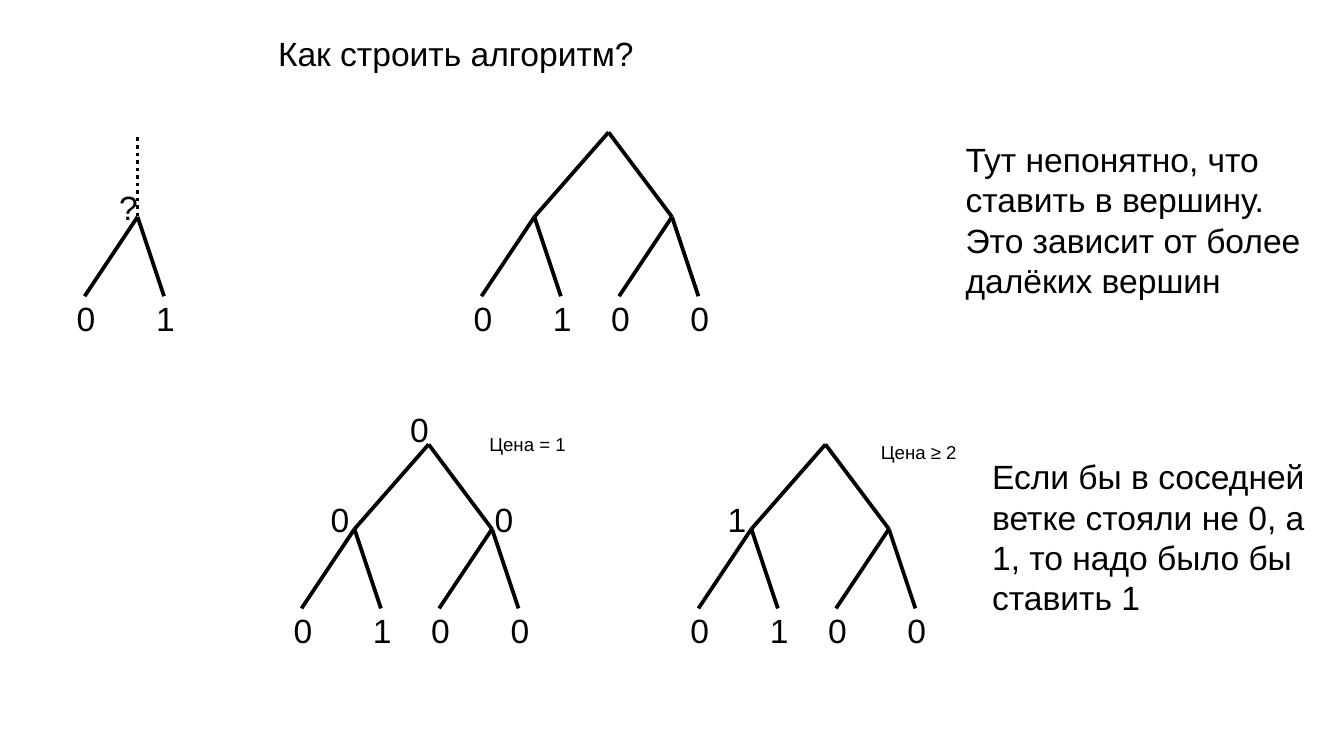
import pptx
import pptx.util
import pptx.dml.color
import pptx.enum.dml
import pptx.enum.shapes
import pptx.enum.text
from dataclasses import dataclass
from pptx.util import Cm


@dataclass(frozen=True)
class Theme:
    font: str = "Arial"
    ink: pptx.dml.color.RGBColor = pptx.dml.color.RGBColor(0, 0, 0)
    body: int = 18
    small: int = 10
    line: int = 0


THEME = Theme()

# Content (positions in cm: left, top, width, height)
TITLE = ("Как строить алгоритм?", (5, 0.5, 13.5, 0.97))
NOTES = [
    ("Тут непонятно, что ставить в вершину. Это зависит от более далёких вершин",
     (18, 2.5, 6.9, 3.1), THEME.body),
    ("Если бы в соседней ветке стояли не 0, а 1, то надо было бы ставить 1",
     (18.5, 8.5, 7, 3.1), THEME.body),
    ("Цена = 1", (9, 8.05, 3, 0.64), THEME.small),
    ("Цена ≥ 2", (16.4, 8.2, 3, 0.64), THEME.small),
]
LONE_FORK = {"at": (2.6, 4.1), "leaves": "01", "mark": "?"}
LEAVES = ("01", "00")
TREES = [
    {"root": (11.5, 2.5), "marks": ("", "", "")},
    {"root": (8.1, 8.4), "marks": ("0", "0", "0")},
    {"root": (15.6, 8.4), "marks": ("", "1", "")},
]

# Tree geometry: offsets from a node to its children and its labels
BRANCHES = [(-1.4, 1.6), (1.2, 1.6)]
TWIGS = [(-1, 1.5), (0.5, 1.5)]
STEM = (0, -1.5)
LEAF_LABEL = (-0.4, -0.1)
ROOT_LABEL = (-0.6, -0.8)
LONE_LABEL = (-0.6, -0.7)
FORK_LABELS = [(-0.7, -0.7), (-0.2, -0.7)]
LABEL_SIZE = (1, 0.97)


def shift(point, offset):
    return point[0] + offset[0], point[1] + offset[1]


def write(box, text, *, place, size=THEME.body):
    box.left, box.top, box.width, box.height = map(Cm, place)
    frame = box.text_frame
    frame.word_wrap = True
    frame.auto_size = pptx.enum.text.MSO_AUTO_SIZE.NONE
    frame.vertical_anchor = pptx.enum.text.MSO_ANCHOR.TOP
    para = frame.paragraphs[0]
    para.alignment = pptx.enum.text.PP_ALIGN.LEFT
    span = para.add_run()
    span.text = text
    span.font.name = THEME.font
    span.font.size = pptx.util.Pt(size)
    span.font.color.rgb = THEME.ink


def add_text(page, text, **style):
    write(page.shapes.add_textbox(0, 0, 0, 0), text, **style)


def add_label(page, text, node, offset):
    if text:
        add_text(page, text, place=shift(node, offset) + LABEL_SIZE)


def add_edge(page, start, end, dotted=False):
    edge = page.shapes.add_connector(
        pptx.enum.shapes.MSO_CONNECTOR.STRAIGHT, *map(Cm, start + end))
    edge.line.color.rgb = THEME.ink
    edge.line.width = pptx.util.Pt(THEME.line)
    if dotted:
        edge.line.dash_style = pptx.enum.dml.MSO_LINE.ROUND_DOT
    properties = edge._element.spPr
    properties.append(properties.makeelement(pptx.oxml.ns.qn("a:effectLst"), {}))


def add_fork(page, node, leaves, mark, mark_offset):
    for leaf, twig in zip(leaves, TWIGS):
        end = shift(node, twig)
        add_edge(page, node, end)
        add_label(page, leaf, end, LEAF_LABEL)
    add_label(page, mark, node, mark_offset)


def add_tree(page, root, marks):
    root_mark, *fork_marks = marks
    for branch, leaves, mark, offset in zip(BRANCHES, LEAVES, fork_marks, FORK_LABELS):
        node = shift(root, branch)
        add_edge(page, root, node)
        add_fork(page, node, leaves, mark, offset)
    add_label(page, root_mark, root, ROOT_LABEL)


def main():
    deck = pptx.Presentation()
    deck.slide_width, deck.slide_height = Cm(25.4), Cm(14.29)
    page = deck.slides.add_slide(deck.slide_layouts[5])

    # Title
    write(page.shapes.title, TITLE[0], place=TITLE[1])

    # Single fork with a dotted stem
    node = LONE_FORK["at"]
    add_edge(page, shift(node, STEM), node, dotted=True)
    add_fork(page, node, LONE_FORK["leaves"], LONE_FORK["mark"], LONE_LABEL)

    # Full trees
    for tree in TREES:
        add_tree(page, **tree)

    # Explanations and prices
    for text, place, size in NOTES:
        add_text(page, text, place=place, size=size)

    deck.save("out.pptx")


if __name__ == "__main__":
    main()
